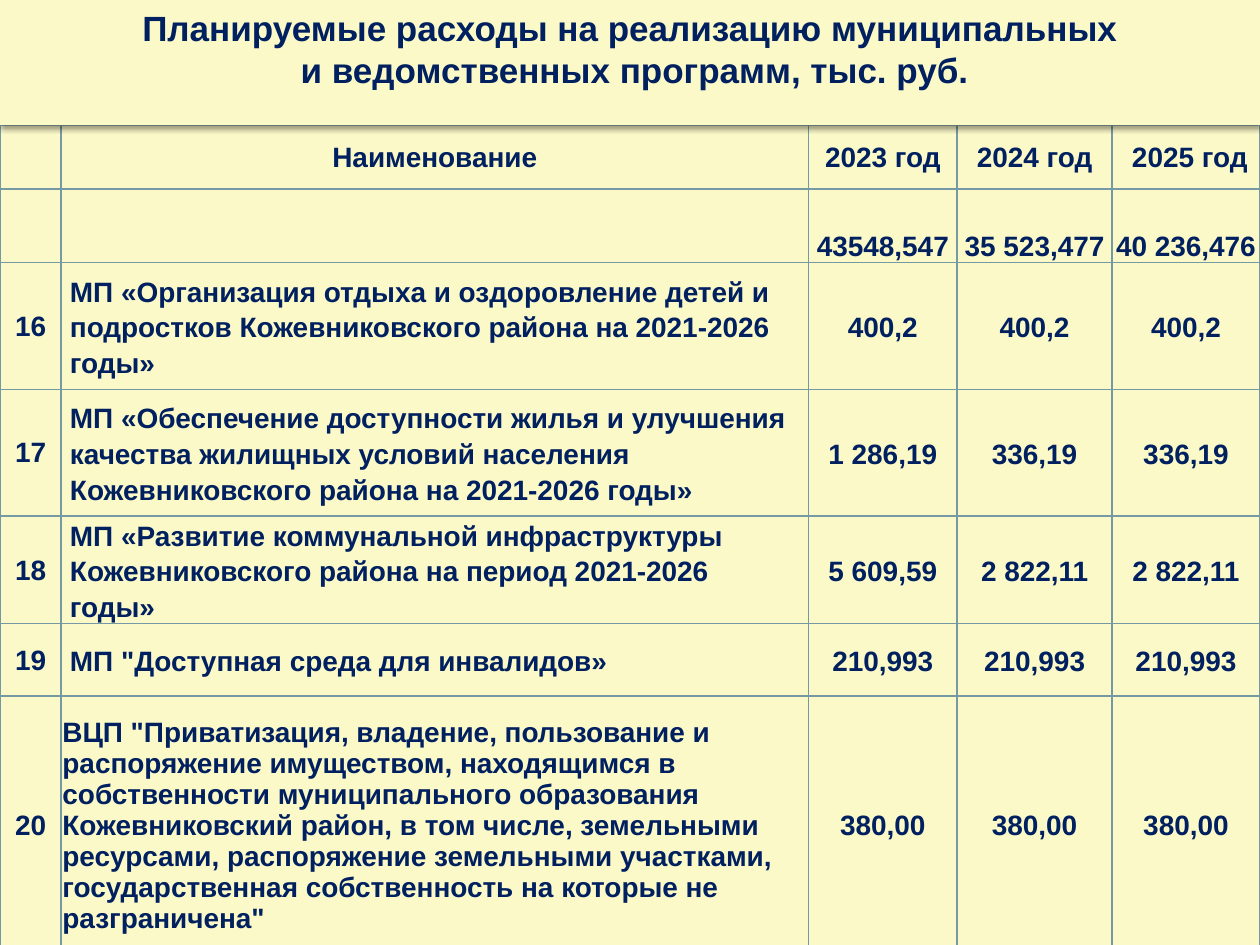
import pptx
import pptx.util
import pptx.oxml
import pptx.dml.color
import pptx.enum.shapes
import pptx.enum.text

Pt = pptx.util.Pt
ALIGN = pptx.enum.text.PP_ALIGN
ANCHOR = pptx.enum.text.MSO_ANCHOR
NS = 'xmlns:a="http://schemas.openxmlformats.org/drawingml/2006/main"'

HUES = {"paper": "FCF9C8", "ink": "002060", "rule": "759AA5", "shade": "000000"}
TITLE = [
    "Планируемые расходы на реализацию муниципальных",
    " и ведомственных программ, тыс. руб.",
]
ROWS = [
    ("head", 36.5, ["", "Наименование", "2023 год", "2024 год", " 2025 год"]),
    ("total", 42, ["", "", "43548,547", "35 523,477", "40 236,476"]),
    ("plan", 72.5, ["16", "МП «Организация отдыха и оздоровление детей и подростков "
                    "Кожевниковского района на 2021-2026 годы»", "400,2", "400,2", "400,2"]),
    ("plan", 72.5, ["17", "МП «Обеспечение доступности жилья и улучшения качества жилищных "
                    "условий населения Кожевниковского района на 2021-2026 годы»",
                    "1 286,19", "336,19", "336,19"]),
    ("plan", 56.5, ["18", "МП «Развитие коммунальной инфраструктуры Кожевниковского района "
                    "на период 2021-2026 годы»", "5 609,59", "2 822,11", "2 822,11"]),
    ("plan", 41.5, ["19", "МП \"Доступная среда для инвалидов»",
                    "210,993", "210,993", "210,993"]),
    ("last", 147.5, ["20", "ВЦП \"Приватизация, владение, пользование и распоряжение имуществом, "
                     "находящимся в собственности муниципального образования Кожевниковский район, "
                     "в том числе, земельными ресурсами, распоряжение земельными участками, "
                     "государственная собственность на которые не разграничена\"",
                     "380,00", "380,00", "380,00"]),
]
COLS = [35, 427, 85, 88.5, 84.5]
WIDE, HIGH, TOP = 720, 540, 71.5
TIGHT = {"margin_left": Pt(0.72), "margin_right": Pt(0.72),
         "margin_top": Pt(0.72), "margin_bottom": Pt(0)}
LOOSE = {"margin_left": Pt(5.04), "margin_right": Pt(5.04),
         "margin_top": Pt(0), "margin_bottom": Pt(0)}


def apply(item, form):
    for name, value in form.items():
        setattr(item, name, value)


def color(name):
    return pptx.dml.color.RGBColor.from_string(HUES[name])


def paint(fill):
    fill.solid()
    fill.fore_color.rgb = color("paper")


def write(para, text, size, form):
    apply(para, form)
    if text:
        run = para.add_run()
        run.text = text
        apply(run.font, {"name": "Arial", "size": Pt(size), "bold": True})
        run.font.color.rgb = color("ink")


def border(cell):
    props = cell._tc.get_or_add_tcPr()
    for side in "LRTB":
        props.append(pptx.oxml.parse_xml(
            f'<a:ln{side} {NS} w="{Pt(1)}"><a:solidFill>'
            f'<a:srgbClr val="{HUES["rule"]}"/></a:solidFill></a:ln{side}>'))


def fill_cell(cell, text, kind, col):
    border(cell)
    paint(cell.fill)
    roomy = kind == "plan" and col > 0
    apply(cell, LOOSE if roomy else TIGHT)
    low = kind == "total"
    cell.vertical_anchor = ANCHOR.BOTTOM if low else ANCHOR.MIDDLE
    left = col == 1 and kind in ("plan", "last")
    form = {"alignment": ALIGN.LEFT if left else ALIGN.CENTER}
    if roomy:
        form["line_spacing"] = 1.15
    write(cell.text_frame.paragraphs[0], text, 16, form)


def add_grid(slide):
    tall = sum(high for _, high, _ in ROWS)
    grid = slide.shapes.add_table(len(ROWS), len(COLS), Pt(0), Pt(TOP), Pt(WIDE), Pt(tall)).table
    apply(grid, {"first_row": False, "horz_banding": False})
    for col, wide in zip(grid.columns, COLS):
        col.width = Pt(wide)
    for r, (kind, high, texts) in enumerate(ROWS):
        grid.rows[r].height = Pt(high)
        for c, text in enumerate(texts):
            fill_cell(grid.cell(r, c), text, kind, c)


def add_title(slide):
    box = slide.shapes.add_shape(pptx.enum.shapes.MSO_SHAPE.RECTANGLE,
                                 Pt(0), Pt(0), Pt(WIDE), Pt(TOP))
    paint(box.fill)
    box.line.fill.background()
    box.shadow.inherit = False
    box._element.spPr.find(pptx.oxml.ns.qn("a:effectLst")).append(pptx.oxml.parse_xml(
        f'<a:outerShdw {NS} blurRad="{Pt(3.1)}" dist="{Pt(2)}" dir="5400000" rotWithShape="0">'
        f'<a:srgbClr val="{HUES["shade"]}"><a:alpha val="38000"/></a:srgbClr></a:outerShdw>'))
    frame = box.text_frame
    apply(frame, {"word_wrap": True, "vertical_anchor": ANCHOR.TOP})
    for i, text in enumerate(TITLE):
        para = frame.add_paragraph() if i else frame.paragraphs[0]
        write(para, text, 20, {"alignment": ALIGN.CENTER})


def main():
    deck = pptx.Presentation()
    apply(deck, {"slide_width": Pt(WIDE), "slide_height": Pt(HIGH)})
    slide = deck.slides.add_slide(deck.slide_layouts[6])
    add_grid(slide)
    add_title(slide)
    deck.save("out.pptx")


if __name__ == "__main__":
    main()
